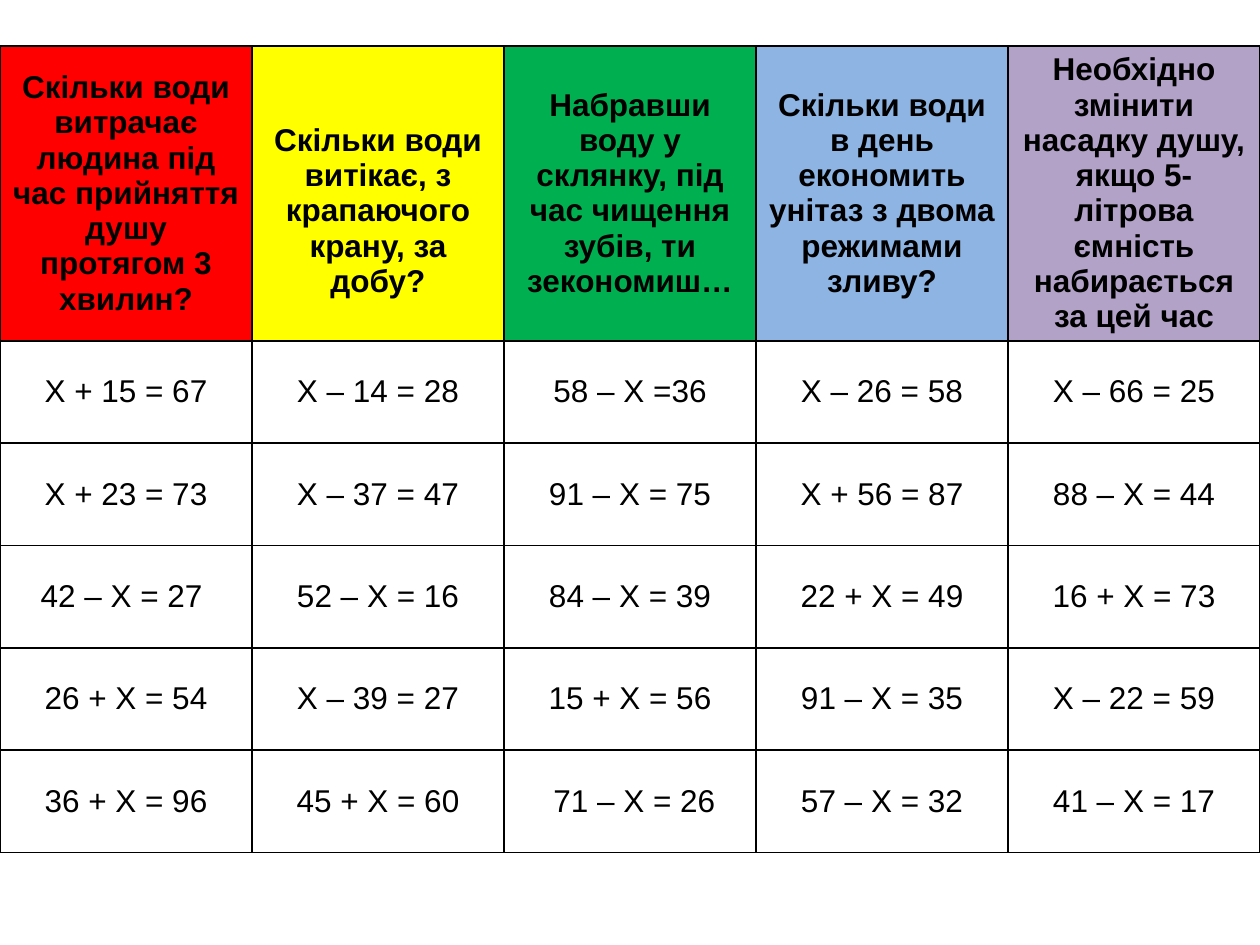
from lxml.etree import SubElement
from pptx import Presentation
from pptx.dml.color import RGBColor
from pptx.enum.text import MSO_ANCHOR as Anchor, PP_ALIGN as Align
from pptx.oxml.ns import qn
from pptx.util import Pt

COLORS = {
    "black": "000000",
    "white": "FFFFFF",
    "red": "FF0000",
    "yellow": "FFFF00",
    "green": "00B050",
    "blue": "8EB4E3",
    "purple": "B3A2C7",
}

QUESTIONS = [
    ("Скільки води витрачає людина під час прийняття душу протягом 3 хвилин?", "red"),
    ("Скільки води витікає, з крапаючого крану, за добу?", "yellow"),
    ("Набравши воду у склянку, під час чищення зубів, ти зекономиш…", "green"),
    ("Скільки води в день економить унітаз з двома режимами зливу?", "blue"),
    ("Необхідно змінити насадку душу, якщо 5-літрова ємність набирається за цей час", "purple"),
]

EQUATIONS = [
    ["X + 15 = 67", "Х – 14 = 28", "58 – X =36", "Х – 26 = 58", "Х – 66 = 25"],
    ["Х + 23 = 73", "Х – 37 = 47", "91 – X = 75", "Х + 56 = 87", "88 – X = 44"],
    ["42 – X = 27 ", "52 – X = 16", "84 – X = 39", "22 + X = 49", "16 + X = 73"],
    ["26 + X = 54", "Х – 39 = 27", "15 + X = 56", "91 – X = 35", "Х – 22 = 59"],
    ["36 + X = 96", "45 + X = 60", " 71 – X = 26", "57 – X = 32", "41 – X = 17"],
]

SLIDE_WIDTH, SLIDE_HEIGHT = 720, 540
TABLE_TOP = 26.2
HEADER_HEIGHT, ROW_HEIGHT = 168.6, 58.5
YELLOW_TOP_MARGIN = 23.8


class SlideBuilder:
    font = "Arial"
    size = 18
    border = 1

    def __init__(self, slide):
        self.slide = slide

    def table(self, top, width, heights, column_count):
        frame = self.slide.shapes.add_table(
            len(heights), column_count, Pt(0), Pt(top), Pt(width), Pt(sum(heights)))
        table = frame.table
        table.first_row = table.horz_banding = False
        for column in table.columns:
            column.width = Pt(width / column_count)
        for row, height in zip(table.rows, heights):
            row.height = Pt(height)
        return table

    def cell(self, cell, text, fill="white", bold=False):
        self.borders(cell)
        cell.fill.solid()
        cell.fill.fore_color.rgb = RGBColor.from_string(COLORS[fill])
        cell.vertical_anchor = Anchor.MIDDLE
        paragraph = cell.text_frame.paragraphs[0]
        paragraph.alignment = Align.CENTER
        run = paragraph.add_run()
        run.text = text
        run.font.name = self.font
        run.font.size = Pt(self.size)
        run.font.bold = bold
        run.font.color.rgb = RGBColor.from_string(COLORS["black"])

    def borders(self, cell):
        properties = cell._tc.get_or_add_tcPr()
        for side in ("a:lnL", "a:lnR", "a:lnT", "a:lnB"):
            line = SubElement(properties, qn(side), w=str(Pt(self.border)))
            fill = SubElement(line, qn("a:solidFill"))
            SubElement(fill, qn("a:srgbClr"), val=COLORS["black"])


def main():
    presentation = Presentation()
    presentation.slide_width = Pt(SLIDE_WIDTH)
    presentation.slide_height = Pt(SLIDE_HEIGHT)
    builder = SlideBuilder(presentation.slides.add_slide(presentation.slide_layouts[6]))

    heights = [HEADER_HEIGHT] + [ROW_HEIGHT] * len(EQUATIONS)
    table = builder.table(TABLE_TOP, SLIDE_WIDTH, heights, len(QUESTIONS))
    for column, (question, color) in enumerate(QUESTIONS):
        builder.cell(table.cell(0, column), question, color, bold=True)
    table.cell(0, 1).margin_top = Pt(YELLOW_TOP_MARGIN)
    for row, equations in enumerate(EQUATIONS, start=1):
        for column, equation in enumerate(equations):
            builder.cell(table.cell(row, column), equation)

    presentation.save("out.pptx")


if __name__ == "__main__":
    main()
